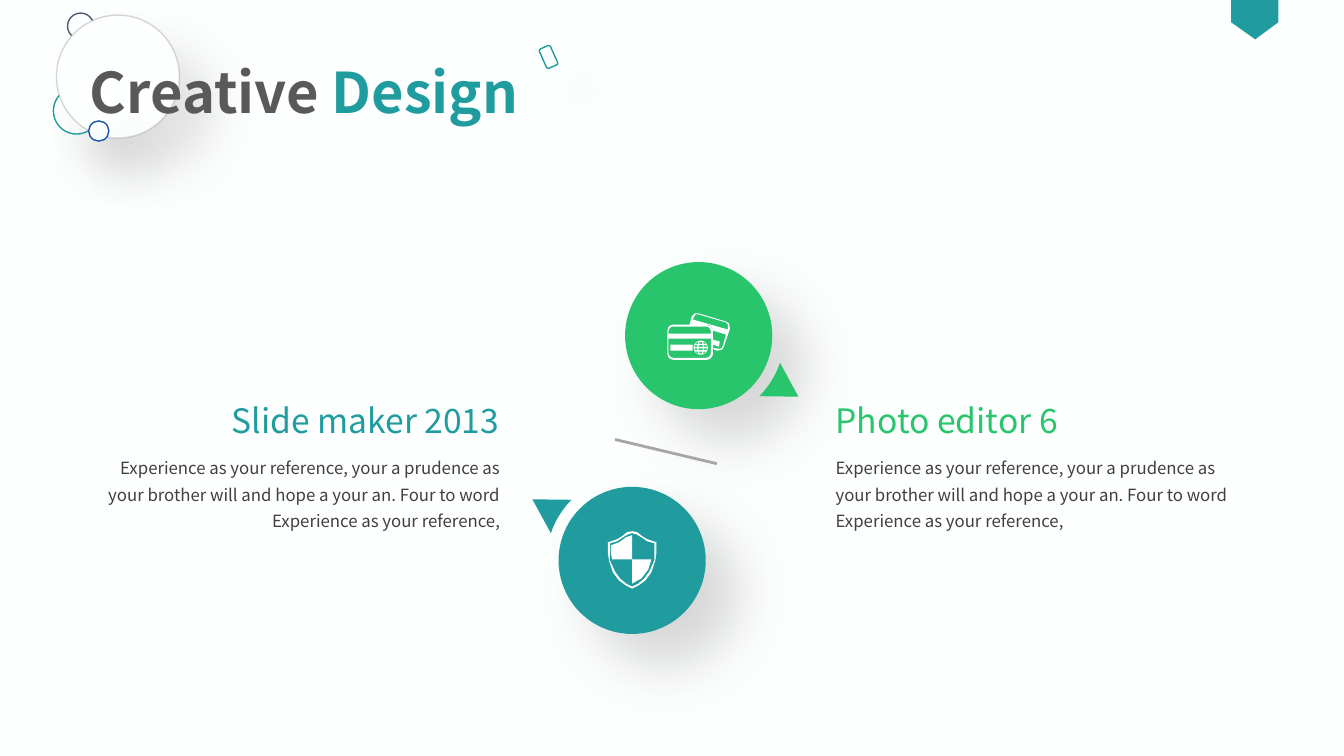
import math

import pptx
import pptx.dml.color
import pptx.enum.shapes
import pptx.enum.text
import pptx.oxml
import pptx.oxml.ns
import pptx.util

WIDTH, HEIGHT = 13.33, 7.5
FONT = "Noto Sans CJK SC"
PAPER, TEAL, GREEN, WHITE = "FDFFFE", "209C9F", "29C56D", "FFFFFF"
GREY, DARK, BODY = "A6A6A6", "595959", "404040"

# Shadow: opacity in percent, blur and distance in points
SOFT, STRONG = (21, 33, 33), (31, 39, 32)

TITLE = [("Creative", DARK), (" Design", TEAL)]
BODY_TEXT = ("Experience as your reference, your a prudence as your brother will "
             "and hope a your an. Four to word Experience as your reference,")
# heading, colour, heading left and width, body left, alignment
COLUMNS = [
    ("Photo editor 6", GREEN, 8.19, 2.81, 8.19, "LEFT"),
    ("Slide maker 2013", TEAL, 1.98, 3.07, 0.79, "RIGHT"),
]
HEADING_ROW, BODY_ROW = (3.92, 0.5), (4.43, 0.89)

# left, top, diameter, line colour
BUBBLES = [
    (0.53, 0.87, 0.46, TEAL),
    (0.67, 0.13, 0.26, "4D5E72"),
    (0.56, 0.15, 1.22, GREY),
    (0.88, 1.2, 0.2, "1754A8"),
]
# centre x, centre y, colour, turn of the pointer in degrees
DISCS = [(6.93, 3.33, GREEN, 0), (6.27, 5.56, TEAL, 180)]
DISC_SIZE, POINTER_RADIUS = 1.46, 0.85
POINTER_TIP, POINTER_ARC = (1.16, 31.5), (18.5, 45)

RIBBON = [(12.21, 0), (12.68, 0), (12.68, 0.22), (12.45, 0.39), (12.21, 0.22)]
BACK_CARD = [
    [(6.84, 3.22), (6.86, 3.14), (6.89, 3.11), (6.93, 3.11), (7.2, 3.19), (7.23, 3.21),
     (7.24, 3.26), (7.18, 3.44), (7.16, 3.47), (7.11, 3.48), (7.07, 3.46), (7.07, 3.28),
     (7.05, 3.24), (7, 3.22)],
    [(7.22, 3.25), (7.22, 3.27), (6.87, 3.17), (6.88, 3.15), (6.9, 3.12), (6.93, 3.12),
     (7.2, 3.2), (7.22, 3.22)],
    [(7.17, 3.43), (7.15, 3.46), (7.12, 3.46), (7.07, 3.45), (7.07, 3.42), (7.13, 3.44),
     (7.14, 3.39), (7.07, 3.37), (7.07, 3.28), (7.2, 3.32)],
]
# left, top, right, bottom, top corner radius, bottom corner radius
FRONT_CARD = [
    (6.62, 3.22, 7.07, 3.57, 0.06, 0.06),
    (6.63, 3.24, 7.05, 3.31, 0.05, 0),
    (6.63, 3.36, 7.05, 3.55, 0, 0.05),
    (6.65, 3.42, 6.87, 3.48, 0, 0),
]
GLOBE, GLOBE_RADIUS = (6.95, 3.45), 0.07
GLOBE_COLUMNS = [(-0.9, -0.5), (-0.3, 0.3), (0.5, 0.9)]
GLOBE_ROWS = [(-0.8, -0.55), (-0.35, -0.1), (0.1, 0.35), (0.55, 0.8)]

SHIELD_AXIS = 6.27
SHIELD_HALVES = [
    [(6.27, 5.27), (6.32, 5.28), (6.37, 5.32), (6.42, 5.35), (6.48, 5.37), (6.51, 5.38),
     (6.51, 5.49), (6.5, 5.56), (6.46, 5.68), (6.4, 5.76), (6.33, 5.81), (6.27, 5.84)],
    [(6.27, 5.29), (6.31, 5.3), (6.36, 5.33), (6.42, 5.37), (6.49, 5.39), (6.49, 5.49),
     (6.49, 5.56), (6.44, 5.67), (6.39, 5.74), (6.33, 5.79), (6.27, 5.82)],
]
SHIELD_QUARTERS = [
    [(6.27, 5.31), (6.27, 5.55), (6.07, 5.55), (6.06, 5.49), (6.06, 5.41), (6.14, 5.38),
     (6.21, 5.33)],
    [(6.27, 5.55), (6.46, 5.55), (6.43, 5.65), (6.36, 5.74), (6.27, 5.79)],
]


def color(hex_text):
    return pptx.dml.color.RGBColor.from_string(hex_text)


def inches(*lengths):
    return [pptx.util.Inches(length) for length in lengths]


def polar(center, radius, degrees):
    angle = math.radians(degrees)
    return center[0] + radius * math.cos(angle), center[1] + radius * math.sin(angle)


def arc(center, radius, start, end, steps=12):
    return [polar(center, radius, start + (end - start) * step / steps)
            for step in range(steps + 1)]


def rounded_box(left, top, right, bottom, top_radius, bottom_radius):
    corners = [(left, top, 1, 1, top_radius, 180), (right, top, -1, 1, top_radius, 270),
               (right, bottom, -1, -1, bottom_radius, 0),
               (left, bottom, 1, -1, bottom_radius, 90)]
    return [point for x, y, inward_x, inward_y, radius, start in corners
            for point in arc((x + inward_x * radius, y + inward_y * radius),
                             radius, start, start + 90, 6)]


def globe_cell(column, row):
    """Give a cell whose sides bend in towards the poles."""
    corners = [(column[0], row[0]), (column[1], row[0]),
               (column[1], row[1]), (column[0], row[1])]
    return [(GLOBE[0] + GLOBE_RADIUS * x * math.sqrt(1 - y * y),
             GLOBE[1] + GLOBE_RADIUS * y) for x, y in corners]


def mirrored(half):
    return half + [(2 * SHIELD_AXIS - x, y) for x, y in half[-2:0:-1]]


def style(shape, fill=None, line=None, shadow=None):
    if fill:
        shape.fill.solid()
        shape.fill.fore_color.rgb = color(fill)
    else:
        shape.fill.background()
    if line:
        shape.line.color.rgb = color(line)
        shape.line.width = pptx.util.Pt(1)
    else:
        shape.line.fill.background()
    shape.shadow.inherit = False
    if shadow:
        opacity, blur, distance = shadow
        effects = shape._element.spPr.find(pptx.oxml.ns.qn("a:effectLst"))
        effects.append(pptx.oxml.parse_xml(
            f'<a:outerShdw {pptx.oxml.ns.nsdecls("a")} blurRad="{pptx.util.Pt(blur)}" '
            f'dist="{pptx.util.Pt(distance)}" dir="2700000" algn="tl" rotWithShape="0">'
            f'<a:srgbClr val="808080"><a:alpha val="{opacity * 1000}"/></a:srgbClr>'
            '</a:outerShdw>'))


def add_outline(slide, contours, fill):
    """Draw closed contours as one shape; a contour inside another is a hole."""
    builder = slide.shapes.build_freeform(*inches(*contours[0][0]), scale=1.0)
    for number, contour in enumerate(contours):
        if number:
            builder.move_to(*inches(*contour[0]))
        builder.add_line_segments([inches(*point) for point in contour[1:]], close=True)
    style(builder.convert_to_shape(), fill)


def add_preset(slide, name, box, **look):
    kind = getattr(pptx.enum.shapes.MSO_SHAPE, name)
    shape = slide.shapes.add_shape(kind, *inches(*box))
    style(shape, **look)
    return shape


def add_text(slide, box, runs, size, align, bold=False, spacing=1.0, anchor="TOP"):
    frame = slide.shapes.add_textbox(*inches(*box)).text_frame
    frame.word_wrap = True
    frame.vertical_anchor = getattr(pptx.enum.text.MSO_ANCHOR, anchor)
    paragraph = frame.paragraphs[0]
    paragraph.alignment = getattr(pptx.enum.text.PP_ALIGN, align)
    paragraph.line_spacing = spacing
    for text, hex_text in runs:
        run = paragraph.add_run()
        run.text = text
        run.font.color.rgb = color(hex_text)
        for key, value in {"name": FONT, "size": pptx.util.Pt(size), "bold": bold}.items():
            setattr(run.font, key, value)


def main():
    presentation = pptx.Presentation()
    presentation.slide_width, presentation.slide_height = inches(WIDTH, HEIGHT)
    slide = presentation.slides.add_slide(presentation.slide_layouts[6])
    slide.background.fill.solid()
    slide.background.fill.fore_color.rgb = color(PAPER)

    add_outline(slide, [RIBBON], TEAL)
    for left, top, size, line in BUBBLES:
        bubble = add_preset(slide, "OVAL", (left, top, size, size),
                            fill=PAPER, line=line, shadow=SOFT)
        if line == GREY:
            line_color = bubble.line._ln.find(".//" + pptx.oxml.ns.qn("a:srgbClr"))
            line_color.append(pptx.oxml.parse_xml(
                f'<a:alpha {pptx.oxml.ns.nsdecls("a")} val="45000"/>'))
    add_text(slide, (0.28, 0.52, 5.47, 0.77), TITLE, 40, "CENTER", bold=True)
    chip = add_preset(slide, "ROUNDED_RECTANGLE", (5.38, 0.46, 0.12, 0.21),
                      line=TEAL, shadow=SOFT)
    chip.rotation = 336

    for x, y, fill, turn in DISCS:
        box = (x - DISC_SIZE / 2, y - DISC_SIZE / 2, DISC_SIZE, DISC_SIZE)
        add_preset(slide, "OVAL", box, fill=fill, shadow=STRONG)
    for x, y, fill, turn in DISCS:
        tip = polar((x, y), POINTER_TIP[0], POINTER_TIP[1] + turn)
        inner = arc((x, y), POINTER_RADIUS, *(angle + turn for angle in POINTER_ARC))
        add_outline(slide, [[tip] + inner], fill)

    globe = [arc(GLOBE, GLOBE_RADIUS, 0, 360, 36)]
    globe += [globe_cell(column, row) for row in GLOBE_ROWS for column in GLOBE_COLUMNS]
    add_outline(slide, BACK_CARD + [rounded_box(*box) for box in FRONT_CARD] + globe, WHITE)
    add_outline(slide, [mirrored(half) for half in SHIELD_HALVES] + SHIELD_QUARTERS, WHITE)

    for heading, hex_text, left, width, body_left, align in COLUMNS:
        add_text(slide, (left, HEADING_ROW[0], width, HEADING_ROW[1]),
                 [(heading, hex_text)], 24, align)
        add_text(slide, (body_left, BODY_ROW[0], 4.27, BODY_ROW[1]),
                 [(BODY_TEXT, BODY)], 12, align, spacing=1.3, anchor="MIDDLE")

    divider = slide.shapes.add_connector(pptx.enum.shapes.MSO_CONNECTOR.STRAIGHT,
                                         *inches(6.1, 4.36, 7.11, 4.6))
    divider.line.color.rgb = color(GREY)
    divider.line.width = pptx.util.Pt(2)
    divider._element.spPr.append(pptx.oxml.parse_xml(
        f'<a:effectLst {pptx.oxml.ns.nsdecls("a")}/>'))
    presentation.save("out.pptx")


if __name__ == "__main__":
    main()
